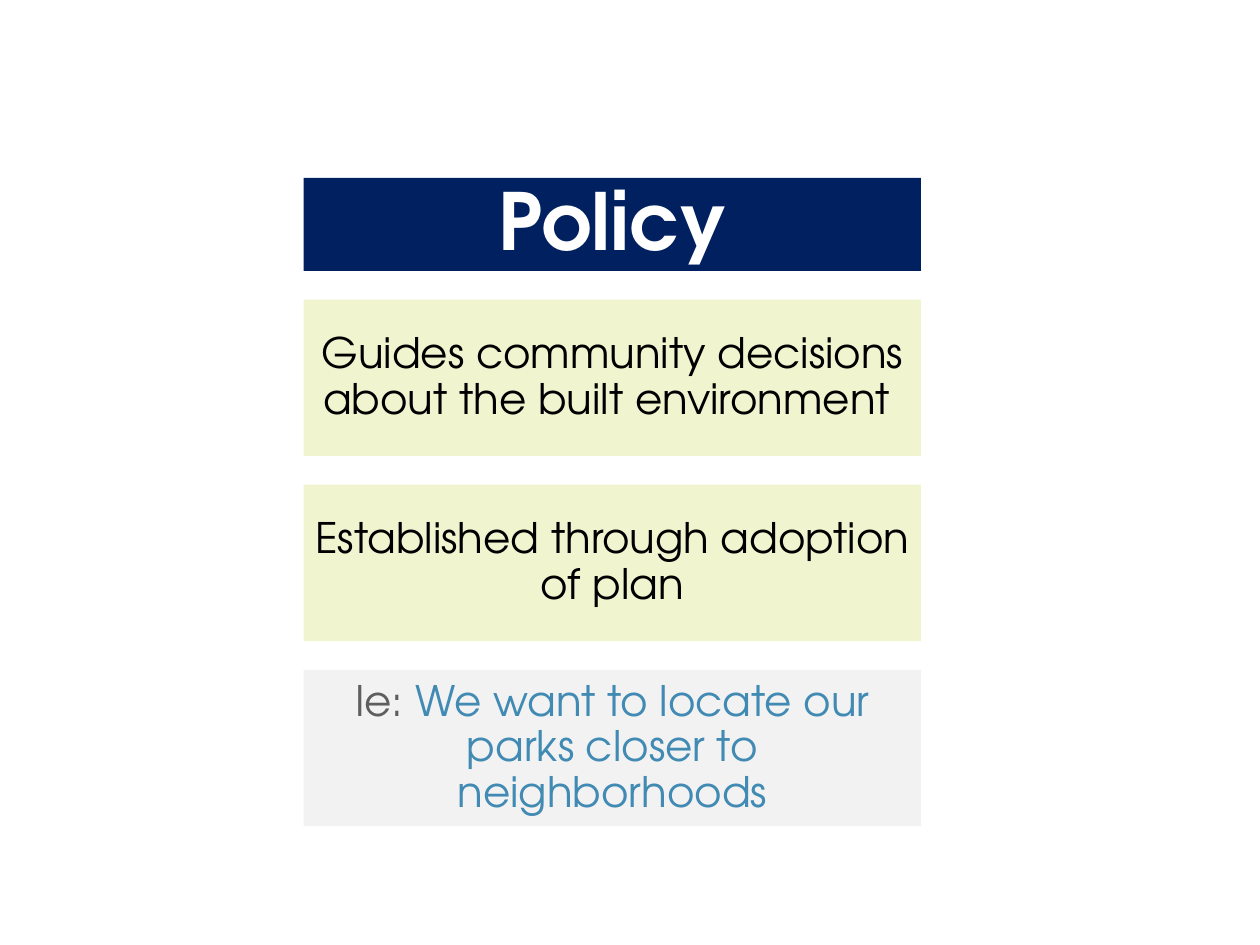
from pptx import Presentation
from pptx.dml.color import RGBColor
from pptx.enum.shapes import MSO_SHAPE
from pptx.enum.text import MSO_ANCHOR, MSO_AUTO_SIZE, PP_ALIGN
from pptx.util import Pt

FONT = "TeX Gyre Adventor"
COLUMN_LEFT, COLUMN_TOP, COLUMN_WIDTH = 173.5, 101.6, 352.8
HEADING_HEIGHT, CARD_HEIGHT, GAP = 53.2, 89.4, 16.4

# Each card: fill colour and its (text, colour) runs
CARDS = [
    ("F0F5D0", [("Guides community decisions about the built environment ", "000000")]),
    ("F0F5D0", [("Established through adoption of plan", "000000")]),
    ("F2F2F2", [("Ie: ", "5E5E5E"),
                ("We want to locate our parks closer to neighborhoods", "418AB3")]),
]


def color(hex_string):
    return RGBColor.from_string(hex_string)


def fill_panel(panel, fill, runs, size, spacing, anchor, bold=False):
    """Colour a panel and set its centred paragraph."""
    panel.fill.solid()
    panel.fill.fore_color.rgb = color(fill)
    panel.line.fill.background()
    frame = panel.text_frame
    frame.word_wrap = True
    frame.auto_size = MSO_AUTO_SIZE.NONE
    frame.vertical_anchor = anchor
    frame.margin_left = frame.margin_right = Pt(5)
    frame.margin_top = frame.margin_bottom = Pt(3)
    paragraph = frame.paragraphs[0]
    paragraph.alignment = PP_ALIGN.CENTER
    paragraph.line_spacing = spacing
    paragraph.space_before = Pt(0)
    paragraph.font.name = FONT
    paragraph.font.size = Pt(size)
    paragraph.font.bold = bold
    for text, text_color in runs:
        run = paragraph.add_run()
        run.text = text
        run.font.color.rgb = color(text_color)


def place_heading(slide, left, top, width, height):
    heading = slide.shapes.title
    heading.left, heading.top = Pt(left), Pt(top)
    heading.width, heading.height = Pt(width), Pt(height)
    fill_panel(heading, "002060", [("Policy", "FFFFFF")], 45, 0.8,
               MSO_ANCHOR.BOTTOM, bold=True)


def add_cards(slide, left, top, width):
    for index, (fill, runs) in enumerate(CARDS):
        card_top = top + index * (CARD_HEIGHT + GAP)
        card = slide.shapes.add_shape(MSO_SHAPE.RECTANGLE, Pt(left), Pt(card_top),
                                      Pt(width), Pt(CARD_HEIGHT))
        card.shadow.inherit = False
        fill_panel(card, fill, runs, 24, 0.9, MSO_ANCHOR.MIDDLE)


def main():
    presentation = Presentation()
    presentation.slide_width, presentation.slide_height = Pt(720), Pt(540)
    slide = presentation.slides.add_slide(
        presentation.slide_layouts.get_by_name("Title Only"))
    place_heading(slide, COLUMN_LEFT, COLUMN_TOP, COLUMN_WIDTH, HEADING_HEIGHT)
    add_cards(slide, COLUMN_LEFT, COLUMN_TOP + HEADING_HEIGHT + GAP, COLUMN_WIDTH)
    presentation.save("out.pptx")


if __name__ == "__main__":
    main()
